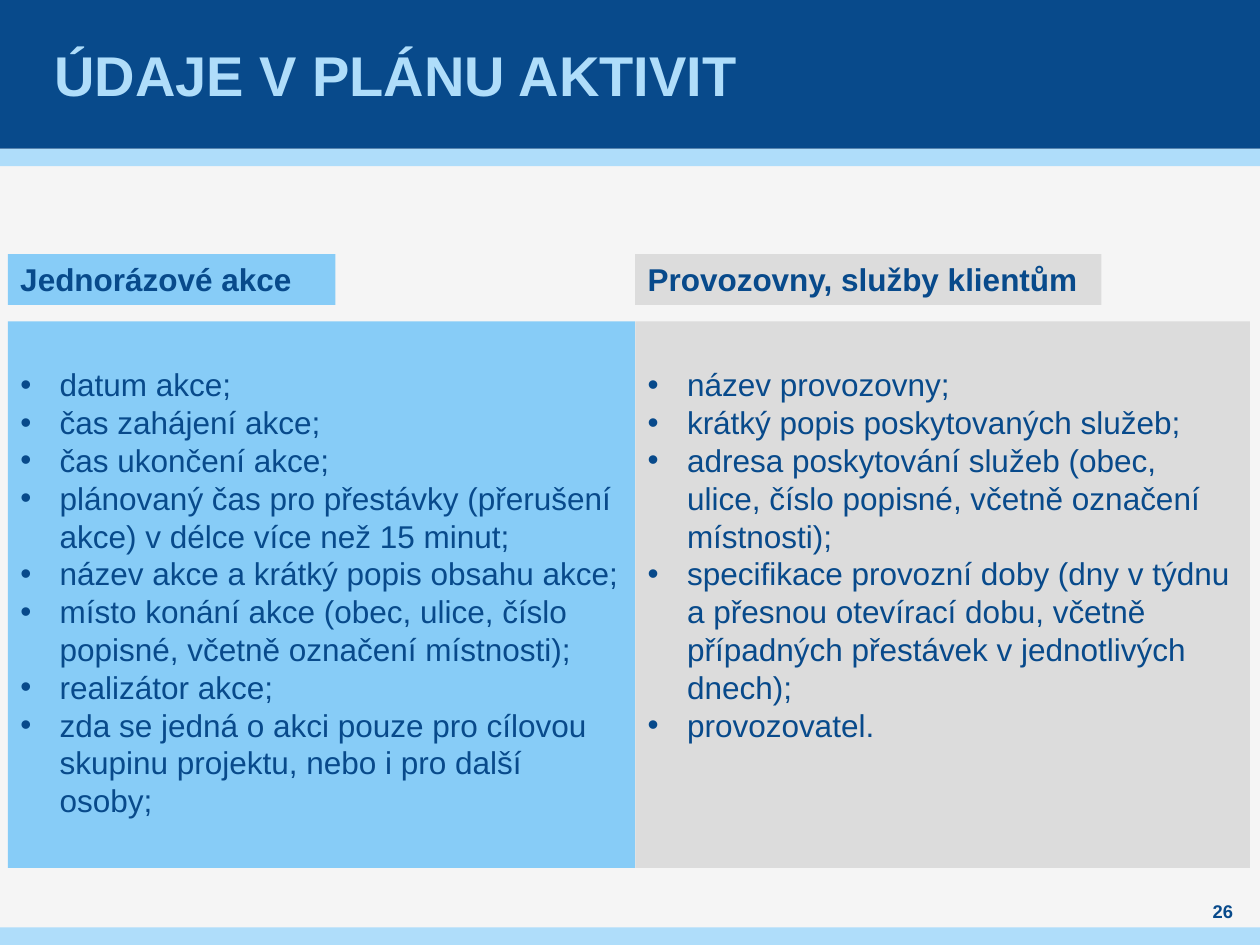
from dataclasses import dataclass

from lxml import etree
from pptx import Presentation
from pptx.dml.color import RGBColor
from pptx.enum import shapes, text
from pptx.oxml import ns
from pptx.util import Pt

NAVY = RGBColor(0x08, 0x4A, 0x8B)
PALE_BLUE = RGBColor(0xAF, 0xDD, 0xFA)
SKY = RGBColor(0x87, 0xCC, 0xF7)
GREY = RGBColor(0xDC, 0xDC, 0xDC)
BACKGROUND = RGBColor(0xF5, 0xF5, 0xF5)

FONT = "Arial"
WIDTH, HEIGHT = 720, 540
HEADER_HEIGHT, STRIPE_HEIGHT = 85, 10
LABEL_TOP, LABEL_HEIGHT = 145.2, 29.1
PANEL_TOP, PANEL_HEIGHT = 183.6, 312.4
PANEL_INSET_TOP = 25.2
BULLET_INDENT = 22.5


@dataclass(frozen=True)
class Box:
    left: float
    top: float
    width: float
    height: float

    def lengths(self) -> tuple:
        return Pt(self.left), Pt(self.top), Pt(self.width), Pt(self.height)


@dataclass(frozen=True)
class Column:
    left: float
    width: float
    label_width: float
    color: RGBColor
    label: str
    items: tuple[str, ...]


COLUMNS = (
    Column(4.5, 358.5, 187.2, SKY, "Jednorázové akce", (
        "datum akce;",
        "čas zahájení akce;",
        "čas ukončení akce;",
        "plánovaný čas pro přestávky (přerušení akce) v délce více než 15 minut;",
        "název akce a krátký popis obsahu akce;",
        "místo konání akce (obec, ulice, číslo popisné, včetně označení místnosti);",
        "realizátor akce;",
        "zda se jedná o akci pouze pro cílovou skupinu projektu, nebo i pro další osoby;",
    )),
    Column(363, 351.3, 266.4, GREY, "Provozovny, služby klientům", (
        "název provozovny;",
        "krátký popis poskytovaných služeb;",
        "adresa poskytování služeb (obec, ulice, číslo popisné, včetně označení místnosti);",
        "specifikace provozní doby (dny v týdnu a přesnou otevírací dobu, včetně "
        "případných přestávek v jednotlivých dnech);",
        "provozovatel.",
    )),
)


def add_rect(s, box: Box, color: RGBColor):
    sp = s.shapes.add_shape(shapes.MSO_SHAPE.RECTANGLE, *box.lengths())
    sp.shadow.inherit = False
    sp.fill.solid()
    sp.fill.fore_color.rgb = color
    sp.line.fill.background()
    return sp


def set_frame(tf, anchor, left: float, top: float, bottom: float) -> None:
    """Wrap the text and set its anchor and insets; the right inset equals the left."""
    tf.word_wrap = True
    tf.vertical_anchor = anchor
    tf.margin_left = tf.margin_right = Pt(left)
    tf.margin_top, tf.margin_bottom = Pt(top), Pt(bottom)


def add_run(p, content: str, size: float, color: RGBColor = NAVY, bold: bool = False) -> None:
    r = p.add_run()
    r.text = content
    r.font.name = FONT
    r.font.size = Pt(size)
    r.font.bold = bold
    r.font.color.rgb = color


def add_bullet(p) -> None:
    props = p._p.get_or_add_pPr()
    props.set("marL", str(Pt(BULLET_INDENT)))
    props.set("indent", str(-Pt(BULLET_INDENT)))
    etree.SubElement(props, ns.qn("a:buFont")).set("typeface", FONT)
    etree.SubElement(props, ns.qn("a:buChar")).set("char", "•")


def add_line(s, box: Box, content: str, size: float, color: RGBColor, align, inset: float) -> None:
    """Add one bold line of text, centred vertically in its box."""
    tf = s.shapes.add_textbox(*box.lengths()).text_frame
    set_frame(tf, text.MSO_ANCHOR.MIDDLE, inset, 0, 0)
    p = tf.paragraphs[0]
    p.alignment = align
    add_run(p, content, size, color, bold=True)


def add_panel(s, column: Column) -> None:
    panel = Box(column.left, PANEL_TOP, column.width, PANEL_HEIGHT)
    tf = add_rect(s, panel, column.color).text_frame
    set_frame(tf, text.MSO_ANCHOR.TOP, 7.2, PANEL_INSET_TOP, 3.6)
    for i, item in enumerate(column.items):
        p = tf.add_paragraph() if i else tf.paragraphs[0]
        p.alignment = text.PP_ALIGN.LEFT
        add_bullet(p)
        add_run(p, item, 18)


def add_label(s, column: Column) -> None:
    label = Box(column.left, LABEL_TOP, column.label_width, LABEL_HEIGHT)
    tf = add_rect(s, label, column.color).text_frame
    set_frame(tf, text.MSO_ANCHOR.TOP, 7.2, 3.6, 3.6)
    p = tf.paragraphs[0]
    p.alignment = text.PP_ALIGN.LEFT
    add_run(p, column.label, 18, bold=True)


def main() -> None:
    prs = Presentation()
    prs.slide_width, prs.slide_height = Pt(WIDTH), Pt(HEIGHT)
    s = prs.slides.add_slide(prs.slide_layouts[6])
    s.background.fill.solid()
    s.background.fill.fore_color.rgb = BACKGROUND

    add_rect(s, Box(0, HEADER_HEIGHT, WIDTH, STRIPE_HEIGHT), PALE_BLUE)
    add_rect(s, Box(0, 0, WIDTH, HEADER_HEIGHT), NAVY)
    add_rect(s, Box(0, HEIGHT - STRIPE_HEIGHT, WIDTH, STRIPE_HEIGHT), PALE_BLUE)
    add_line(s, Box(28.1, 0, 663, HEADER_HEIGHT), "ÚDAJE V PLÁNU AKTIVIT",
             32, PALE_BLUE, text.PP_ALIGN.LEFT, 2.9)
    add_line(s, Box(680.4, 513.4, 36.7, 14.4), "26", 10.5, NAVY, text.PP_ALIGN.CENTER, 0)

    for column in COLUMNS:
        add_panel(s, column)
    for column in COLUMNS:
        add_label(s, column)

    prs.save("out.pptx")


if __name__ == "__main__":
    main()
